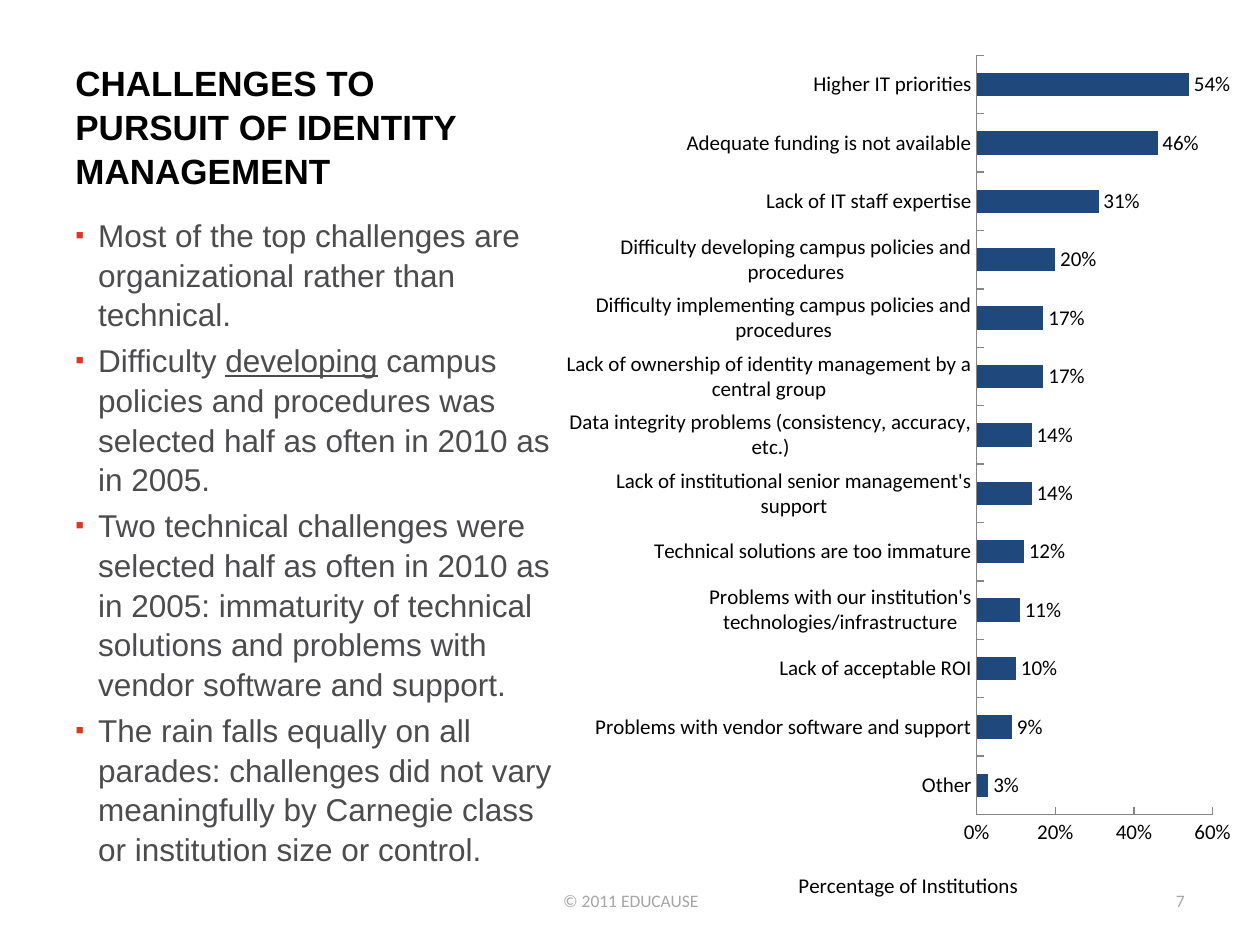
from lxml.etree import SubElement
from pptx import Presentation
from pptx.chart.data import CategoryChartData
from pptx.dml.color import RGBColor
from pptx.enum.chart import XL_CHART_TYPE as ChartType
from pptx.enum.chart import XL_LABEL_POSITION as LabelPosition
from pptx.enum.chart import XL_TICK_MARK as TickMark
from pptx.enum.text import MSO_ANCHOR as Anchor
from pptx.enum.text import PP_ALIGN as Align
from pptx.oxml import parse_xml
from pptx.oxml.ns import nsdecls, qn
from pptx.util import Cm, Pt

BLACK = RGBColor(0x00, 0x00, 0x00)
BODY_GRAY = RGBColor(0x4C, 0x4C, 0x4F)
FOOTER_GRAY = RGBColor(0xA6, 0xA6, 0xA6)
AXIS_GRAY = RGBColor(0x86, 0x86, 0x86)
BULLET_RED = RGBColor(0xE3, 0x33, 0x23)
BAR_BLUE = RGBColor(0x1F, 0x49, 0x7D)

TITLE = "CHALLENGES TO PURSUIT OF IDENTITY MANAGEMENT"
BULLETS = [
    [("Most of the top challenges are organizational rather than technical.", False)],
    [
        ("Difficulty ", False),
        ("developing", True),
        (" campus policies and procedures was selected half as often in 2010 as in 2005.", False),
    ],
    [("Two technical challenges were selected half as often in 2010 as in 2005: "
      "immaturity of technical solutions and problems with vendor software and support.", False)],
    [("The rain falls equally on all parades: challenges did not vary meaningfully "
      "by Carnegie class or institution size or control.", False)],
]
CHALLENGES = [
    ("Other", 0.03),
    ("Problems with vendor software and support", 0.09),
    ("Lack of acceptable ROI", 0.10),
    ("Problems with our institution's technologies/infrastructure", 0.11),
    ("Technical solutions are too immature", 0.12),
    ("Lack of institutional senior management's support", 0.14),
    ("Data integrity problems (consistency, accuracy, etc.)", 0.14),
    ("Lack of ownership of identity management by a central group", 0.17),
    ("Difficulty implementing campus policies and procedures", 0.17),
    ("Difficulty developing campus policies and procedures", 0.20),
    ("Lack of IT staff expertise", 0.31),
    ("Adequate funding is not available", 0.46),
    ("Higher IT priorities", 0.54),
]


def set_font(font, name, size, color, bold=False):
    """Apply typeface, size, colour and weight to a font."""
    font.name = name
    font.size = Pt(size)
    font.color.rgb = color
    font.bold = bold


def add_text_frame(page, box, anchor):
    """Add a wrapping text box and return its frame."""
    frame = page.shapes.add_textbox(*box).text_frame
    frame.word_wrap = True
    frame.vertical_anchor = anchor
    return frame


def add_title(page, box):
    """Place the bold slide title at the foot of its box."""
    para = add_text_frame(page, box, Anchor.BOTTOM).paragraphs[0]
    para.add_run().text = TITLE
    para.line_spacing = 1.05
    set_font(para.font, "Arial", 20, BLACK, bold=True)


def set_bullet(para):
    """Give a paragraph a hanging red square bullet."""
    props = para._p.get_or_add_pPr()
    props.set("marL", str(Cm(0.46)))
    props.set("indent", str(-Cm(0.46)))
    color = SubElement(props, qn("a:buClr"))
    SubElement(color, qn("a:srgbClr"), val=str(BULLET_RED))
    SubElement(props, qn("a:buSzPct"), val="80000")
    SubElement(props, qn("a:buFont"), typeface="Arial")
    SubElement(props, qn("a:buChar"), char="▪")


def add_bullets(page, box):
    """Place the bulleted findings."""
    frame = add_text_frame(page, box, Anchor.TOP)
    for index, pieces in enumerate(BULLETS):
        para = frame.add_paragraph() if index else frame.paragraphs[0]
        set_bullet(para)
        para.line_spacing = 1.05
        if index:
            para.space_before = Pt(3.6)
        set_font(para.font, "Arial", 18, BODY_GRAY)
        for text, underlined in pieces:
            span = para.add_run()
            span.text = text
            if underlined:
                span.font.underline = True


def make_layout(target=None, **fractions):
    """Return a manual chart layout from fractions of the chart area."""
    layout = parse_xml(f"<c:layout {nsdecls('c')}/>")
    manual = SubElement(layout, qn("c:manualLayout"))
    if target:
        SubElement(manual, qn("c:layoutTarget"), val=target)
    for mode in ("xMode", "yMode"):
        SubElement(manual, qn(f"c:{mode}"), val="edge")
    for key, value in fractions.items():
        SubElement(manual, qn(f"c:{key}"), val=str(value))
    return layout


def drop_layout(parent):
    """Remove any layout an element already holds."""
    for layout in parent.findall(qn("c:layout")):
        parent.remove(layout)


def style_axes(chart):
    """Format both axes and the title of the value axis."""
    for axis in (chart.category_axis, chart.value_axis):
        axis.major_tick_mark = TickMark.INSIDE
        axis.minor_tick_mark = TickMark.NONE
        axis.has_major_gridlines = False
        axis.format.line.color.rgb = AXIS_GRAY
        axis.format.line.width = Pt(0.75)
        set_font(axis.tick_labels.font, "Calibri", 12, BLACK)
    values = chart.value_axis
    values.minimum_scale, values.maximum_scale, values.major_unit = 0, 0.6, 0.2
    values.tick_labels.number_format = "0%"
    values.tick_labels.number_format_is_linked = False
    title = values.axis_title
    para = title.text_frame.paragraphs[0]
    para.add_run().text = "Percentage of Institutions"
    set_font(para.runs[0].font, "Calibri", 12, BLACK)
    drop_layout(title.element)
    title.element.find(qn("c:tx")).addnext(make_layout(x=0.34, y=0.94))


def add_challenge_chart(page, box):
    """Place the bar chart of challenges by share of institutions."""
    data = CategoryChartData(number_format="0%")
    data.categories = [name for name, share in CHALLENGES]
    data.add_series("Series 1", [share for name, share in CHALLENGES])
    chart = page.shapes.add_chart(ChartType.BAR_CLUSTERED, *box, data).chart
    chart.has_legend = False
    chart.has_title = False
    set_font(chart.font, "Calibri", 12, BLACK)
    style_axes(chart)
    plot = chart.plots[0]
    plot.gap_width = 150
    plot.vary_by_categories = False
    fill = plot.series[0].format.fill
    fill.solid()
    fill.fore_color.rgb = BAR_BLUE
    plot.has_data_labels = True
    labels = plot.data_labels
    labels.show_value = True
    labels.number_format = "0%"
    labels.number_format_is_linked = False
    labels.position = LabelPosition.OUTSIDE_END
    set_font(labels.font, "Calibri", 12, BLACK)
    area = chart.element.find(f"{qn('c:chart')}/{qn('c:plotArea')}")
    drop_layout(area)
    area.insert(0, make_layout("inner", x=0.61, y=0.02, w=0.35, h=0.86))


def add_footer(page, box, text, align):
    """Place one small gray footer line."""
    para = add_text_frame(page, box, Anchor.MIDDLE).paragraphs[0]
    para.add_run().text = text
    para.alignment = align
    set_font(para.font, "Calibri", 10, FOOTER_GRAY)


def main():
    """Build the slide and save the deck."""
    deck = Presentation()
    deck.slide_width, deck.slide_height = Cm(25.4), Cm(19.05)
    page = deck.slides.add_slide(deck.slide_layouts[6])
    add_title(page, (Cm(1.27), Cm(0.76), Cm(8.36), Cm(3.23)))
    add_bullets(page, (Cm(1.27), Cm(4.19), Cm(10.14), Cm(13.77)))
    add_challenge_chart(page, (Cm(11.4), Cm(0.76), Cm(13.59), Cm(17.8)))
    add_footer(page, (Cm(18.21), Cm(17.65), Cm(5.92), Cm(1.02)), "7", Align.RIGHT)
    add_footer(page, (Cm(8.69), Cm(17.65), Cm(8.05), Cm(1.02)), "© 2011 EDUCAUSE", Align.CENTER)
    deck.save("out.pptx")


if __name__ == "__main__":
    main()
